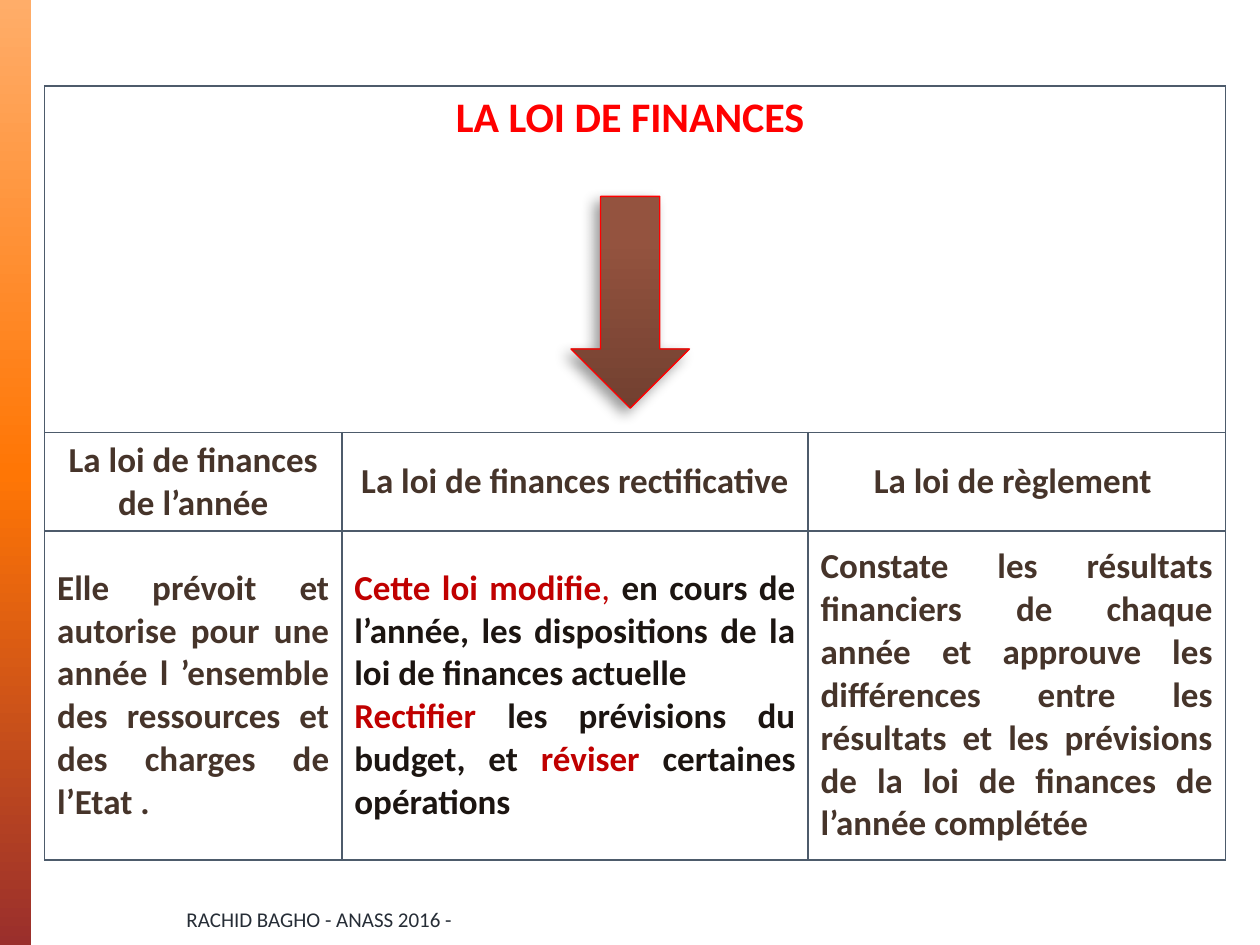
from lxml import etree
from pptx import Presentation
from pptx import util as u
from pptx.dml.color import RGBColor
from pptx.enum import shapes, text
from pptx.oxml.ns import qn

C = {"white": "FFFFFF", "border": "4D5B6B", "title": "FF0000", "brown": "46342A",
     "accent": "C00000", "dark": "1C1511", "footer": "262D36", "shadow": "000000"}
BAR = [(0, "FFAD69"), (50, "FF7605"), (100, "9A2F2C")]
ARROW = [(0, "724030"), (80, "94533F"), (100, "97523D")]
FONT = "Calibri"

TITLE = "LA LOI DE FINANCES "
HEADS = ["La loi de finances de l’année", "La loi de finances rectificative", "La loi de règlement "]
BODIES = [
    [[("Elle prévoit et autorise pour une année l ’ensemble des ressources "
       "et des charges de l’Etat .", "brown", True)]],
    [[("Cette loi modifie", "accent", True), (", ", "accent", False),
      ("en cours de l’année, les dispositions de la loi de finances actuelle ", "dark", True)],
     [("Rectifier", "accent", True), (" les prévisions du budget, et ", "dark", True),
      ("réviser", "accent", True), (" certaines opérations ", "dark", True)]],
    [[("Constate les résultats financiers de chaque année et approuve les différences "
       "entre les résultats et les prévisions de la loi de finances de l’année complétée",
       "brown", True)]],
]
FOOTER = "RACHID BAGHO - ANASS 2016 -"
COLS = [5.99, 9.4, 8.41]
ROWS = [6.99, 1.98, 6.63]


def rgb(name):
    return RGBColor.from_string(C[name])


def add(parent, tag, **attrs):
    return etree.SubElement(parent, qn(tag), {k: str(v) for k, v in attrs.items()})


def gradient(sp, stops, angle):
    sp.fill.gradient()
    grad = sp.element.spPr.find(qn("a:gradFill"))
    for child in list(grad):
        grad.remove(child)
    gs_list = add(grad, "a:gsLst")
    for pos, color in stops:
        add(add(gs_list, "a:gs", pos=pos * 1000), "a:srgbClr", val=color)
    add(grad, "a:lin", ang=angle * 60000, scaled=0)


def write(tf, paragraphs, size, align):
    tf.text = "\n".join("".join(t for t, _, _ in runs) for runs in paragraphs)
    for p, runs in zip(tf.paragraphs, paragraphs):
        p.text = ""
        p.alignment = align
        for content, color, bold in runs:
            r = p.add_run()
            r.text = content
            r.font.name, r.font.size, r.font.bold = FONT, u.Pt(size), bold
            r.font.color.rgb = rgb(color)


def style_cell(cell, paragraphs, size, align, anchor):
    write(cell.text_frame, paragraphs, size, align)
    cell.vertical_anchor = anchor


def border(cell):
    tc_pr = cell._tc.get_or_add_tcPr()
    for i, side in enumerate(("a:lnL", "a:lnR", "a:lnT", "a:lnB")):
        ln = add(tc_pr, side, w=u.Pt(1))
        add(add(ln, "a:solidFill"), "a:srgbClr", val=C["border"])
        tc_pr.insert(i, ln)


prs = Presentation()
prs.slide_width, prs.slide_height = u.Cm(25.4), u.Cm(19.05)
s = prs.slides.add_slide(prs.slide_layouts[6])

bar = s.shapes.add_shape(shapes.MSO_SHAPE.RECTANGLE, 0, 0, u.Cm(0.63), prs.slide_height)
bar.shadow.inherit = False
bar.line.fill.background()
gradient(bar, BAR, 90)

table = s.shapes.add_table(len(ROWS), len(COLS), u.Cm(0.9), u.Cm(1.73),
                           u.Cm(sum(COLS)), u.Cm(sum(ROWS))).table
table.first_row = table.horz_banding = False
for col, width in zip(table.columns, COLS):
    col.width = u.Cm(width)
for row, height in zip(table.rows, ROWS):
    row.height = u.Cm(height)
for cell in table.iter_cells():
    cell.fill.solid()
    cell.fill.fore_color.rgb = rgb("white")
    border(cell)
table.cell(0, 0).merge(table.cell(0, len(COLS) - 1))

AL, AN = text.PP_ALIGN, text.MSO_ANCHOR
style_cell(table.cell(0, 0), [[(TITLE, "title", True)]], 24, AL.CENTER, AN.TOP)
for i, (head, body) in enumerate(zip(HEADS, BODIES)):
    style_cell(table.cell(1, i), [[(head, "brown", True)]], 20, AL.CENTER, AN.MIDDLE)
    style_cell(table.cell(2, i), body, 20, AL.JUSTIFY, AN.MIDDLE)

footer = s.shapes.add_textbox(u.Cm(3.51), u.Cm(18.21), u.Cm(19.89), u.Cm(0.64))
tf = footer.text_frame
tf.word_wrap = True
tf.vertical_anchor = AN.MIDDLE
write(tf, [[(FOOTER, "footer", False)]], 12, AL.LEFT)

arrow = s.shapes.add_shape(shapes.MSO_SHAPE.DOWN_ARROW, u.Cm(11.51), u.Cm(3.96), u.Cm(2.39), u.Cm(4.27))
gradient(arrow, ARROW, 270)
arrow.line.color.rgb = rgb("title")
arrow.line.width = u.Pt(0.75)
arrow.shadow.inherit = False
shadow = add(arrow.element.spPr.find(qn("a:effectLst")), "a:outerShdw", blurRad=u.Pt(8),
             dist=u.Pt(5), dir=135 * 60000, rotWithShape=0)
add(add(shadow, "a:srgbClr", val=C["shadow"]), "a:alpha", val=40000)

prs.save("out.pptx")
